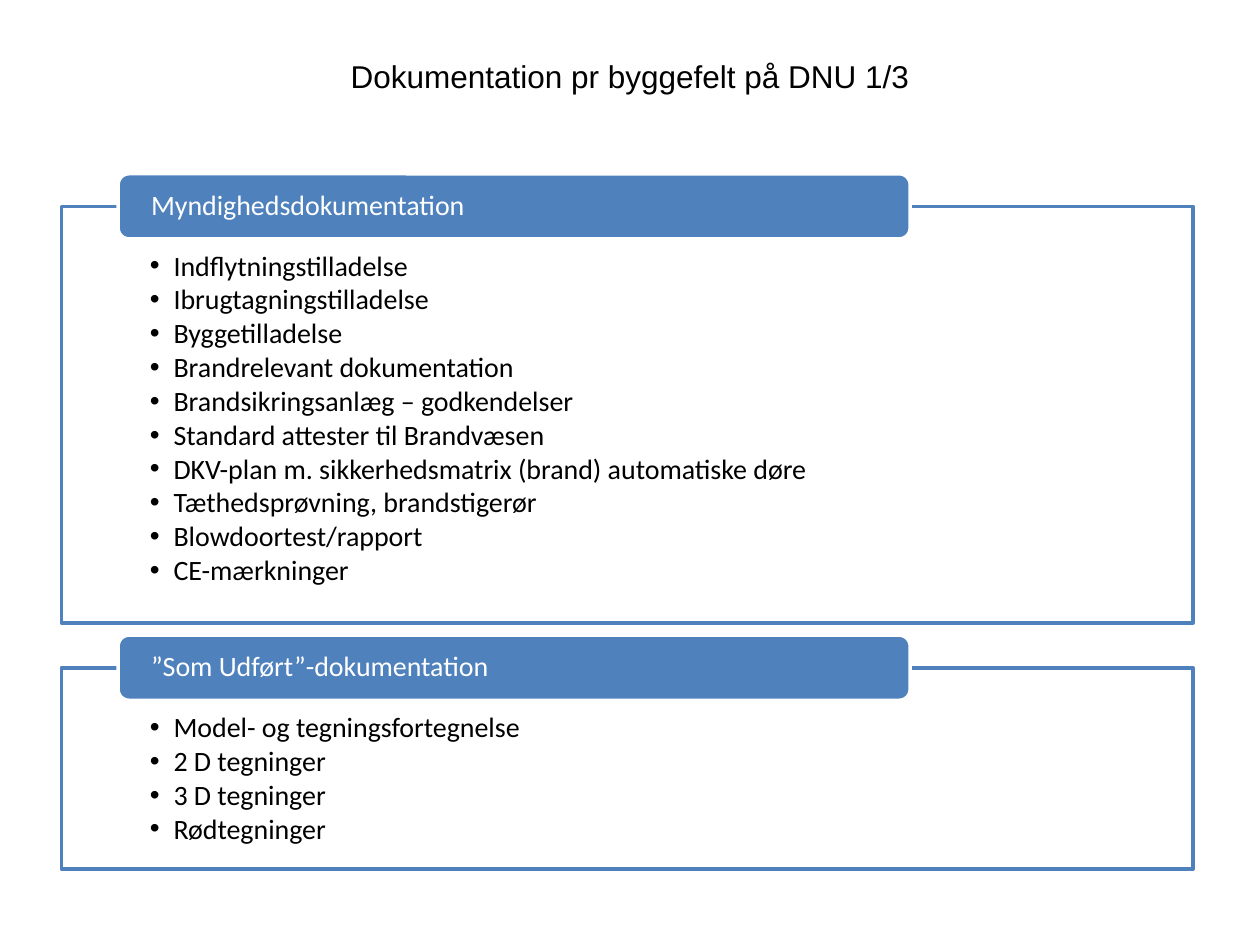
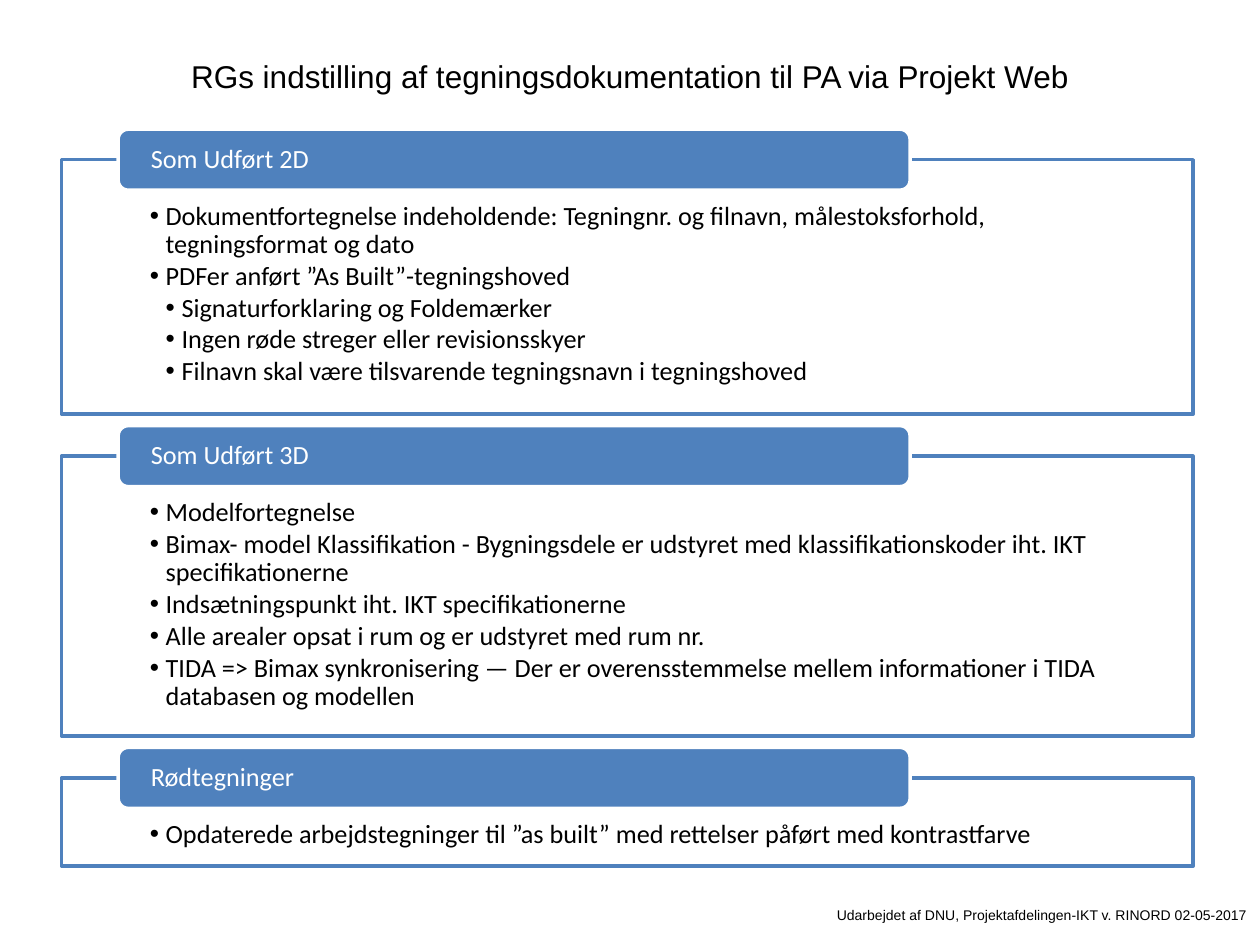
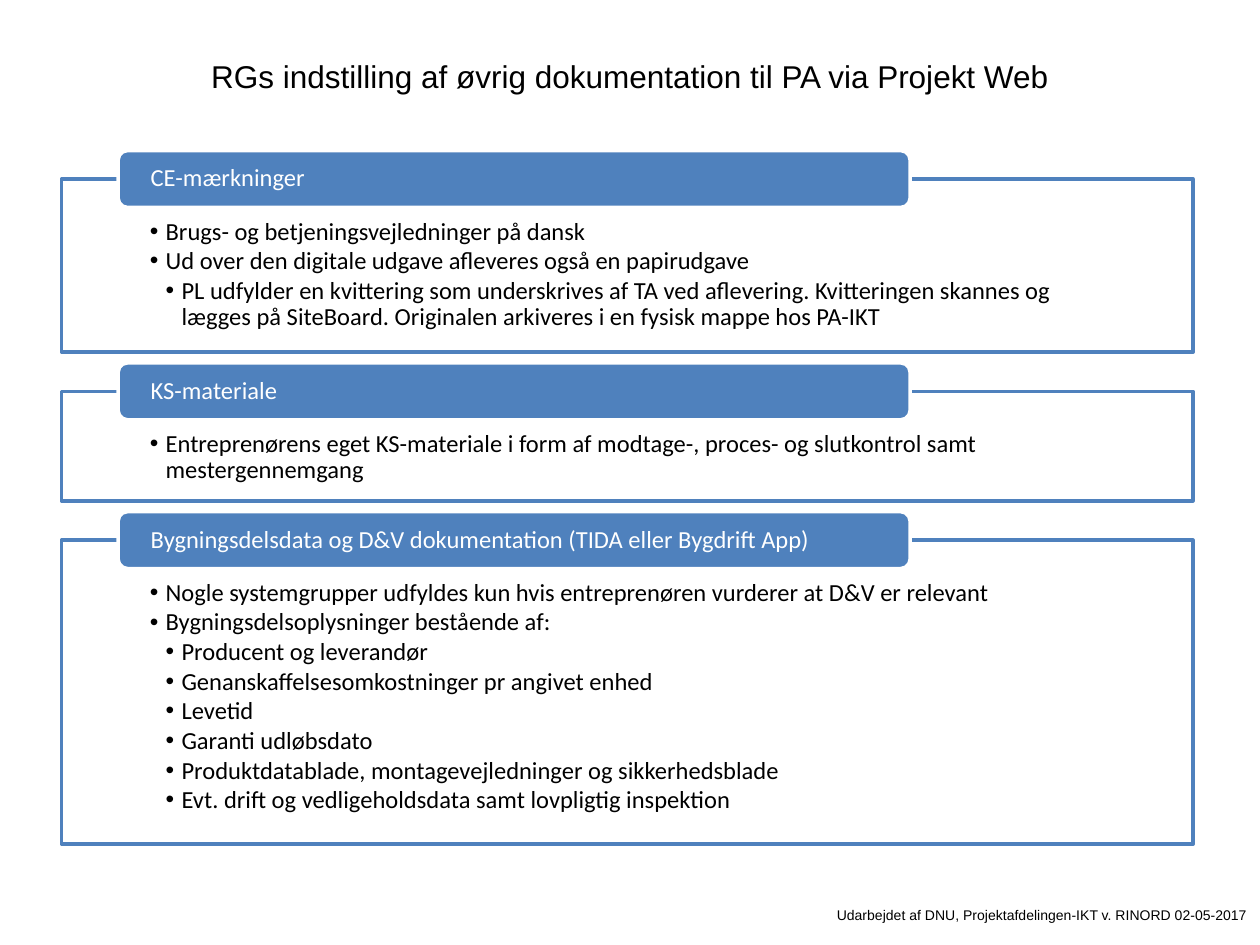
from lxml.etree import SubElement
from pptx import Presentation
from pptx.dml.color import RGBColor
from pptx.enum.shapes import MSO_SHAPE
from pptx.enum.text import MSO_ANCHOR, PP_ALIGN
from pptx.oxml.ns import qn
from pptx.util import Cm, Pt

BLUE, WHITE, BLACK = "4F81BD", "FFFFFF", "000000"
TITLE_BOX = (1.27, -0.05, 22.86, 3.18)
FOOTER_BOX = (9.91, 18.14, 15.49, 0.91)
STACK_LEFT, STACK_WIDTH = 1.24, 22.81
FOOTER = "Udarbejdet af DNU, Projektafdelingen-IKT v. RINORD 02-05-2017"

DOCUMENTATION = [
    ("Myndighedsdokumentation", 8.4, [
        (1, "Indflytningstilladelse"),
        (1, "Ibrugtagningstilladelse"),
        (1, "Byggetilladelse"),
        (1, "Brandrelevant dokumentation"),
        (1, "Brandsikringsanlæg – godkendelser"),
        (1, "Standard attester til Brandvæsen"),
        (1, "DKV-plan m. sikkerhedsmatrix (brand) automatiske døre"),
        (1, "Tæthedsprøvning, brandstigerør"),
        (1, "Blowdoortest/rapport"),
        (1, "CE-mærkninger"),
    ]),
    ("”Som Udført”-dokumentation", 4.06, [
        (1, "Model- og tegningsfortegnelse"),
        (1, "2 D tegninger"),
        (1, "3 D tegninger"),
        (1, "Rødtegninger"),
    ]),
]
DRAWINGS = [
    ("Som Udført 2D", 5.13, [
        (1, "Dokumentfortegnelse indeholdende: Tegningnr. og filnavn, "
            "målestoksforhold, tegningsformat og dato"),
        (1, "PDFer anført ”As Built”-tegningshoved"),
        (2, "Signaturforklaring og Foldemærker"),
        (2, "Ingen røde streger eller revisionsskyer"),
        (2, "Filnavn skal være tilsvarende tegningsnavn i tegningshoved"),
    ]),
    ("Som Udført 3D", 5.64, [
        (1, "Modelfortegnelse"),
        (1, "Bimax- model Klassifikation - Bygningsdele er udstyret med "
            "klassifikationskoder iht. IKT specifikationerne"),
        (1, "Indsætningspunkt iht. IKT specifikationerne"),
        (1, "Alle arealer opsat i rum og er udstyret med rum nr."),
        (1, "TIDA => Bimax synkronisering — Der er overensstemmelse mellem "
            "informationer i TIDA databasen og modellen"),
    ]),
    ("Rødtegninger", 1.78, [
        (1, "Opdaterede arbejdstegninger til ”as built” med rettelser "
            "påført med kontrastfarve"),
    ]),
]
OTHER = [
    ("CE-mærkninger", 3.49, [
        (1, "Brugs- og betjeningsvejledninger på dansk"),
        (1, "Ud over den digitale udgave afleveres også en papirudgave"),
        (2, "PL udfylder en kvittering som underskrives af TA ved aflevering. "
            "Kvitteringen skannes og lægges på SiteBoard. Originalen "
            "arkiveres i en fysisk mappe hos PA-IKT"),
    ]),
    ("KS-materiale", 2.21, [
        (1, "Entreprenørens eget KS-materiale i form af modtage-, proces- og "
            "slutkontrol samt mestergennemgang"),
    ]),
    ("Bygningsdelsdata og D&V dokumentation (TIDA eller Bygdrift App)", 6.13, [
        (1, "Nogle systemgrupper udfyldes kun hvis entreprenøren vurderer "
            "at D&V er relevant"),
        (1, "Bygningsdelsoplysninger bestående af:"),
        (2, "Producent og leverandør"),
        (2, "Genanskaffelsesomkostninger pr angivet enhed"),
        (2, "Levetid"),
        (2, "Garanti udløbsdato"),
        (2, "Produktdatablade, montagevejledninger og sikkerhedsblade"),
        (2, "Evt. drift og vedligeholdsdata samt lovpligtig inspektion"),
    ]),
]
SLIDES = [
    ("Dokumentation pr byggefelt på DNU 1/3",
     DOCUMENTATION, 4.16, 16, 0.48, False),
    ("RGs indstilling af tegningsdokumentation til PA via Projekt Web",
     DRAWINGS, 3.22, 15, 0.32, True),
    ("RGs indstilling af øvrig dokumentation til PA via Projekt Web",
     OTHER, 3.61, 14, 0.32, True),
]


def rgb(value):
    """Return the colour for a hex string."""
    return RGBColor.from_string(value)


def style(p, size, font, color, align=PP_ALIGN.LEFT):
    """Align a paragraph and format its runs."""
    p.alignment = align
    for r in p.runs:
        r.font.size = Pt(size)
        r.font.name = font
        r.font.color.rgb = rgb(color)


def set_frame(tf, anchor, left, top, right, bottom):
    """Wrap a text frame and set its anchor and margins in cm."""
    tf.word_wrap = True
    tf.vertical_anchor = anchor
    tf.margin_left, tf.margin_top = Cm(left), Cm(top)
    tf.margin_right, tf.margin_bottom = Cm(right), Cm(bottom)


def add_label(s, box, text, size, align, anchor):
    """Add a plain Arial text line in a box."""
    tf = s.shapes.add_textbox(*map(Cm, box)).text_frame
    set_frame(tf, anchor, 0.25, 0.13, 0.25, 0.13)
    tf.text = text
    style(tf.paragraphs[0], size, "Arial", BLACK, align)


def add_block(s, kind, box, fill, line):
    """Add a filled and outlined shape without shadow."""
    sp = s.shapes.add_shape(kind, *map(Cm, box))
    sp.shadow.inherit = False
    sp.fill.solid()
    sp.fill.fore_color.rgb = rgb(fill)
    sp.line.color.rgb = rgb(line)
    sp.line.width = Pt(2)
    return sp


def add_bullet(p, level, indent):
    """Give a paragraph a hanging round bullet."""
    pPr = p._p.get_or_add_pPr()
    pPr.set("marL", str(Cm(indent * level)))
    pPr.set("indent", str(-Cm(indent)))
    SubElement(pPr, qn("a:buFont"), typeface="Arial")
    SubElement(pPr, qn("a:buChar"), char="•")


def add_section(s, box, heading, items, size, indent):
    """Add a framed bullet list with a heading tab over its top edge."""
    left, top, width, height = box
    frame = add_block(s, MSO_SHAPE.RECTANGLE, box, WHITE, BLUE)
    tf = frame.text_frame
    set_frame(tf, MSO_ANCHOR.TOP, 1.78, 0.0575 * size, 1.78, 0.3)
    for i, (level, text) in enumerate(items):
        p = tf.add_paragraph() if i else tf.paragraphs[0]
        p.text = text
        p.level = level
        p.line_spacing = 0.9
        p.space_after = Pt(0.13 * size)
        add_bullet(p, level, indent)
        style(p, size, "Calibri", BLACK)

    tab_height = 0.082 * size
    tab_box = (left + 0.05 * width, top - tab_height / 2, 0.7 * width, tab_height)
    tab = add_block(s, MSO_SHAPE.ROUNDED_RECTANGLE, tab_box, BLUE, WHITE)
    set_frame(tab.text_frame, MSO_ANCHOR.MIDDLE, 0.6, 0, 0.6, 0)
    tab.text_frame.text = heading
    p = tab.text_frame.paragraphs[0]
    p.line_spacing = 0.9
    style(p, size, "Calibri", WHITE)


def add_list_slide(prs, title, sections, top, size, indent, has_footer):
    """Add a slide with a title and a stack of sections."""
    s = prs.slides.add_slide(prs.slide_layouts[6])
    for heading, height, items in sections:
        box = (STACK_LEFT, top, STACK_WIDTH, height)
        add_section(s, box, heading, items, size, indent)
        top += height + 0.0564 * size
    add_label(s, TITLE_BOX, title, 18, PP_ALIGN.CENTER, MSO_ANCHOR.MIDDLE)
    if has_footer:
        add_label(s, FOOTER_BOX, FOOTER, 8, PP_ALIGN.RIGHT, MSO_ANCHOR.TOP)


def main():
    """Build and save the presentation."""
    prs = Presentation()
    prs.slide_width, prs.slide_height = Cm(25.4), Cm(19.05)
    for content in SLIDES:
        add_list_slide(prs, *content)
    prs.save("out.pptx")


if __name__ == "__main__":
    main()
